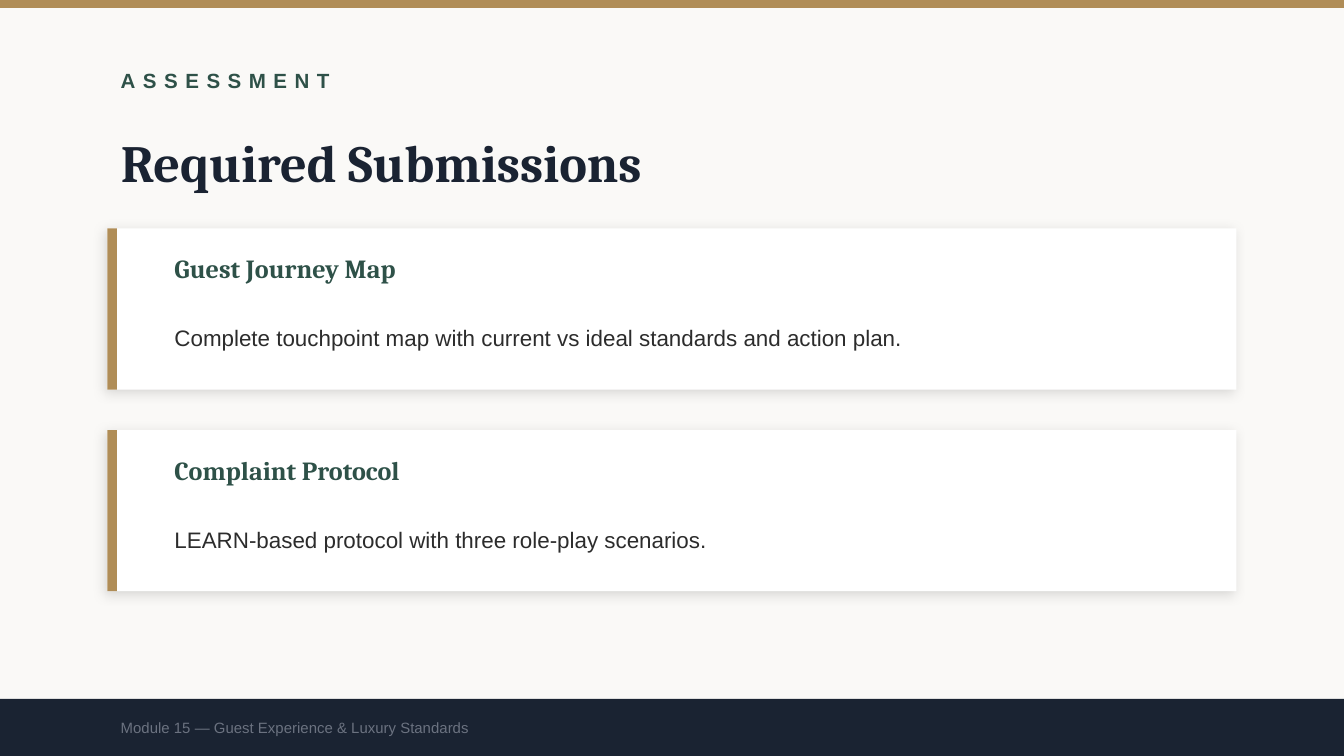
import pptx
import pptx.dml.color
import pptx.enum.shapes
import pptx.enum.text
import pptx.util
import lxml.etree

GOLD, GREEN, NAVY = "B08D57", "2E5148", "1A2332"
DRAWING = "http://schemas.openxmlformats.org/drawingml/2006/main"
CARD_SHADOW = f"""<a:effectLst xmlns:a="{DRAWING}">
  <a:outerShdw blurRad="76200" dist="25400" dir="8100000" algn="bl" rotWithShape="0">
    <a:srgbClr val="000000"><a:alpha val="12000"/></a:srgbClr>
  </a:outerShdw>
</a:effectLst>"""

presentation = pptx.Presentation()
presentation.slide_width = pptx.util.Inches(10)
presentation.slide_height = presentation.slide_width * 9 // 16
slide = presentation.slides.add_slide(presentation.slide_layouts[5])
color = pptx.dml.color.RGBColor.from_string
slide.background.fill.solid()
slide.background.fill.fore_color.rgb = color("FAF9F7")

# The grid is 100 columns wide, with square cells.
CELL = presentation.slide_width // 100
MARGIN, TEXT_WIDTH = 8, 80
FOOTER_TOP = 52
FOOTER_HEIGHT = presentation.slide_height / CELL - FOOTER_TOP


def add_bar(left, top, width, height, fill):
    bounds = [round(cells * CELL) for cells in (left, top, width, height)]
    bar = slide.shapes.add_shape(pptx.enum.shapes.MSO_SHAPE.RECTANGLE, *bounds)
    bar.shadow.inherit = False
    bar.fill.solid()
    bar.fill.fore_color.rgb = color(fill)
    bar.line.fill.background()
    return bar


def write(text, left, top, width, height, font_name, size, fill, bold=False, shape=None):
    """Put one line of text in the given shape, or in a new text box."""
    shape = shape or slide.shapes.add_textbox(0, 0, 0, 0)
    shape.left, shape.top, shape.width, shape.height = [
        round(cells * CELL) for cells in (left, top, width, height)]
    frame = shape.text_frame
    frame.text = text
    frame.word_wrap = True
    frame.auto_size = pptx.enum.text.MSO_AUTO_SIZE.NONE
    frame.vertical_anchor = pptx.enum.text.MSO_ANCHOR.MIDDLE
    paragraph = frame.paragraphs[0]
    paragraph.alignment = pptx.enum.text.PP_ALIGN.LEFT
    paragraph.font.name = font_name
    paragraph.font.size = pptx.util.Pt(size)
    paragraph.font.bold = bold
    paragraph.font.color.rgb = color(fill)
    return paragraph


add_bar(0, 0, 100, 0.6, GOLD)
label = write("ASSESSMENT", MARGIN, 4, TEXT_WIDTH, 4, "Arial", 11, GREEN, True)
label.runs[0].font._element.set("spc", "400")
write("Required Submissions", MARGIN, 9, TEXT_WIDTH, 6, "Cambria", 28, NAVY, True,
      slide.shapes.title)

cards = [
    ("Guest Journey Map",
     "Complete touchpoint map with current vs ideal standards and action plan."),
    ("Complaint Protocol", "LEARN-based protocol with three role-play scenarios."),
]
for index, (heading, description) in enumerate(cards):
    top = 17 + 15 * index
    card = add_bar(MARGIN, top, 100 - 2 * MARGIN, 12, "FFFFFF")
    properties = card._element.spPr
    properties.remove(properties.find(f"{{{DRAWING}}}effectLst"))
    properties.append(lxml.etree.fromstring(CARD_SHADOW))
    add_bar(MARGIN, top, 0.7, 12, GOLD)
    write(heading, 12, top + 1.2, 77, 3.5, "Cambria", 14, GREEN, True)
    body = write(description, 12, top + 5, 77, 5.5, "Arial", 12, "2C2C2C")
    body.line_spacing = 1.4

add_bar(0, FOOTER_TOP, 100, FOOTER_HEIGHT, NAVY)
write("Module 15 — Guest Experience & Luxury Standards",
      MARGIN, FOOTER_TOP, TEXT_WIDTH, FOOTER_HEIGHT, "Arial", 8, "6B7280")

presentation.save("out.pptx")
